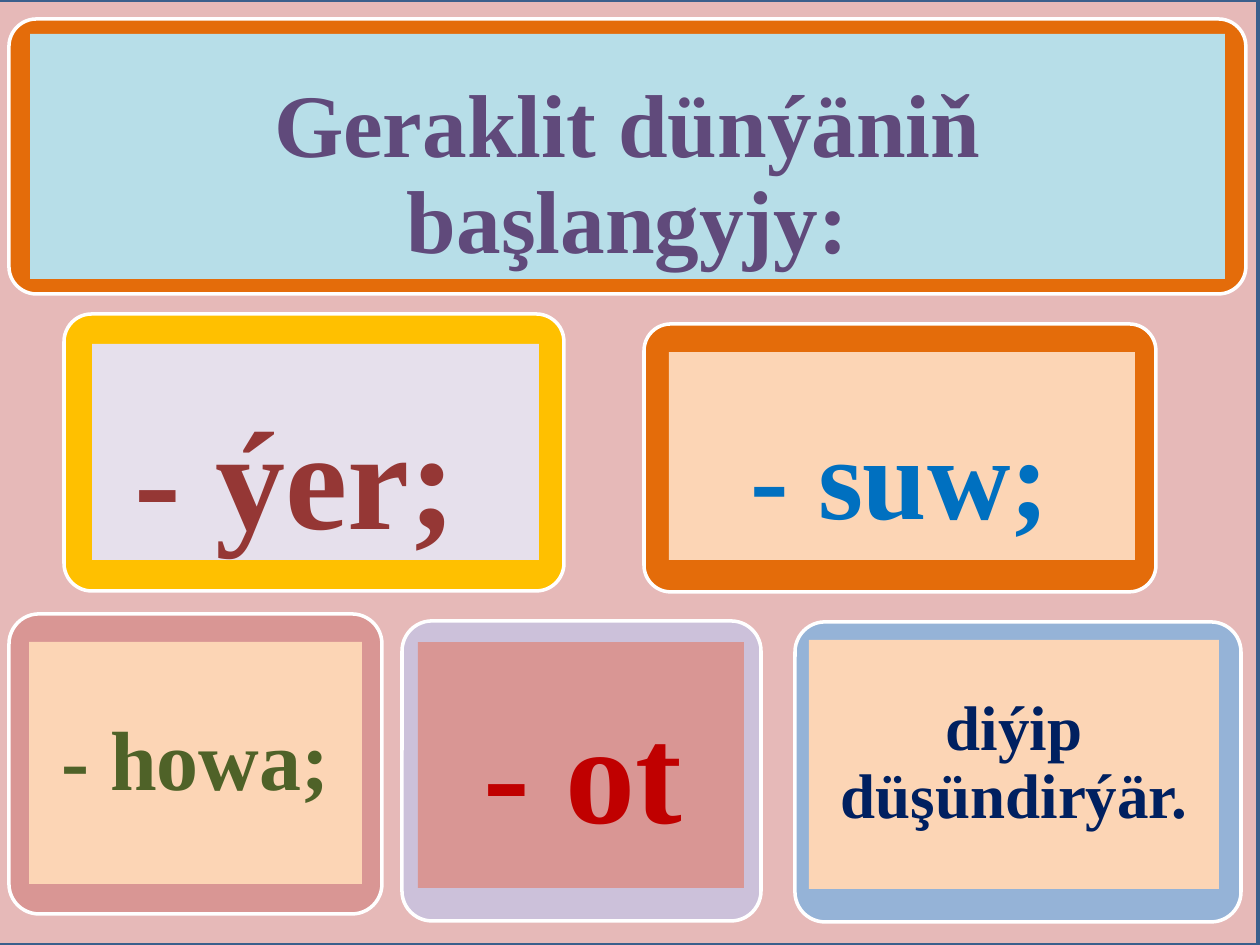
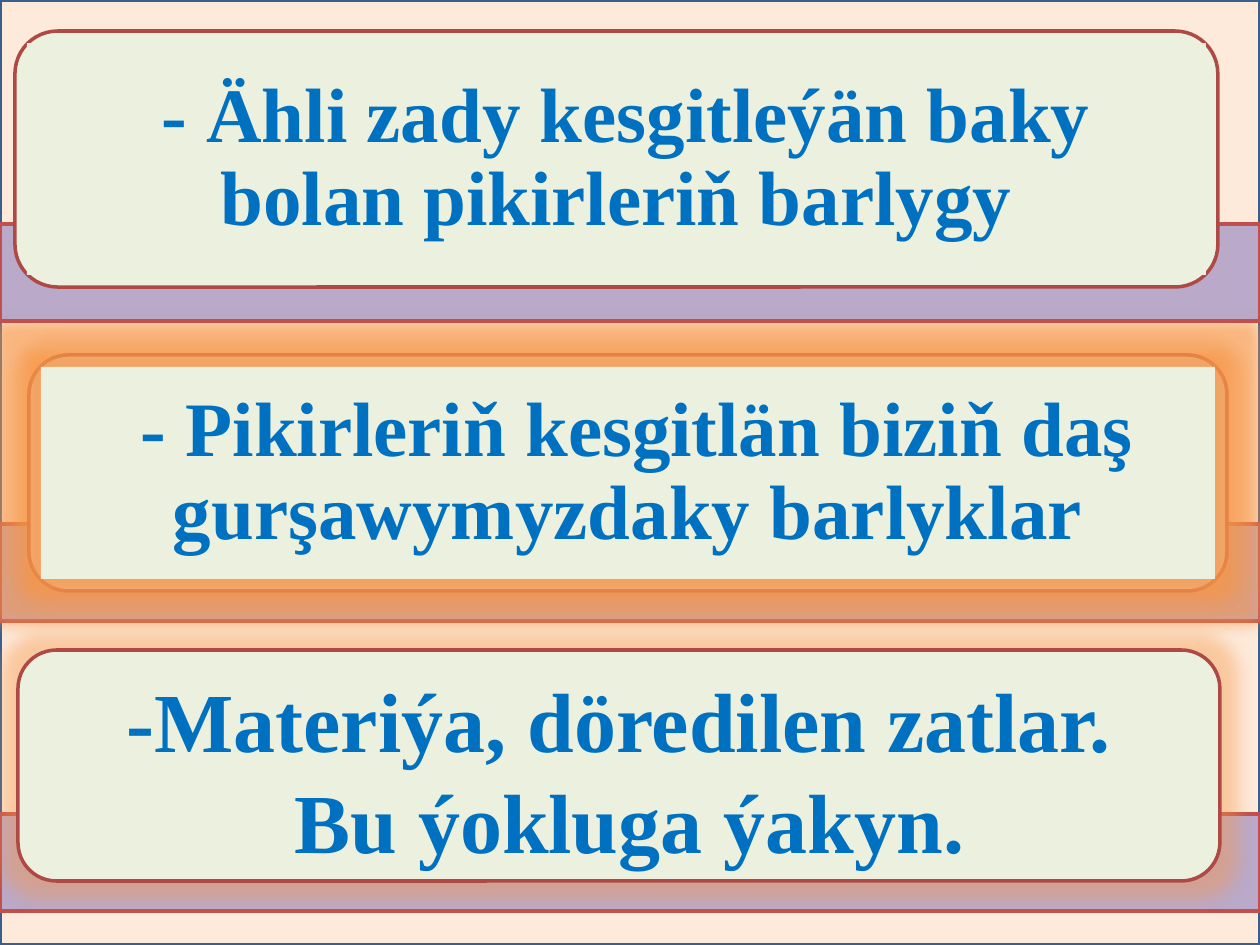
from lxml import etree
from pptx import Presentation
from pptx import util as u
from pptx.dml.color import RGBColor
from pptx.enum import shapes, text
from pptx.oxml import ns

PX = 914400 // 126
FONT = "Times New Roman"
COLOURS = {
    "white": "FFFFFF", "frame": "3A5F8C", "pink": "E6B9B8", "cream": "FDEADA",
    "orange": "E46C0A", "gold": "FFC000", "rose": "D99694", "lilac": "CCC1DA",
    "steel": "95B3D7", "aqua": "B7DEE8", "mist": "E6E0EC", "peach": "FCD5B5",
    "pale green": "EBF1DE", "pale blue": "DCE6F2", "violet": "B3A2C7",
    "red line": "C0504D", "dark red line": "AE4946", "glow": "F79646",
    "purple": "604A7B", "brick": "953735", "blue": "0070C0",
    "olive": "4F6228", "red": "C00000", "navy": "002060",
}
RECT = shapes.MSO_SHAPE.RECTANGLE
ROUND = shapes.MSO_SHAPE.ROUNDED_RECTANGLE


def rgb(name):
    return RGBColor.from_string(COLOURS[name])


def px(*lengths):
    return [length * PX for length in lengths]


def inner(box, left, top, right, bottom):
    """Box left after taking a margin from each side."""
    x, y, width, height = box
    return x + left, y + top, width - left - right, height - top - bottom


def add_box(page, kind, box, fill, line=None):
    shape = page.shapes.add_shape(kind, *px(*box))
    shape.shadow.inherit = False
    shape.fill.solid()
    shape.fill.fore_color.rgb = rgb(fill)
    if line:
        shape.line.color.rgb = rgb(line)
        shape.line.width = u.Pt(2)
    else:
        shape.line.fill.background()
    return shape


def write(shape, wording, size, colour, spacing=0.9, insets=(32, 0, 32, 0)):
    """Bold centred text; insets are left, top, right, bottom."""
    frame = shape.text_frame
    frame.text = wording
    frame.word_wrap = True
    frame.auto_size = text.MSO_AUTO_SIZE.NONE
    frame.vertical_anchor = text.MSO_ANCHOR.MIDDLE
    (frame.margin_left, frame.margin_top,
     frame.margin_right, frame.margin_bottom) = px(*insets)
    for para in frame.paragraphs:
        para.alignment = text.PP_ALIGN.CENTER
        para.line_spacing = spacing
        para.space_before = u.Pt(0)
        for span in para.runs:
            span.font.name = FONT
            span.font.size = u.Pt(size)
            span.font.bold = True
            span.font.color.rgb = rgb(colour)


def add_alpha(colour_element, percent):
    alpha = etree.SubElement(colour_element, ns.qn("a:alpha"))
    alpha.set("val", str(percent * 1000))


def add_glow(shape, radius=31, percent=40):
    effects = shape.element.spPr.find(ns.qn("a:effectLst"))
    glow = etree.SubElement(effects, ns.qn("a:glow"), rad=str(radius * PX))
    colour = etree.SubElement(glow, ns.qn("a:srgbClr"), val=COLOURS["glow"])
    add_alpha(colour, percent)


def add_frame(page, fill):
    return add_box(page, RECT, (0, 0, 1260, 945), fill, "frame")


# Slide of framed cards
def add_card_border(page, box, fill):
    card = add_box(page, ROUND, box, fill, "white")
    card.adjustments[0] = 0.1
    return card


def add_heading(page, box, wording):
    border = add_card_border(page, box, "orange")
    title = page.shapes.title
    title.left, title.top, title.width, title.height = px(*inner(box, 21, 15, 21, 15))
    title.fill.solid()
    title.fill.fore_color.rgb = rgb("aqua")
    write(title, wording, 51, "purple", insets=(26, 40, 26, 0))
    border.element.addnext(title.element)


def add_card(page, box, margins, border, fill, wording, size, colour, **layout):
    add_card_border(page, box, border)
    panel = add_box(page, RECT, inner(box, *margins), fill)
    write(panel, wording, size, colour, **layout)


def build_origins(deck):
    page = deck.slides.add_slide(deck.slide_layouts[5])
    add_frame(page, "pink").left = -2 * PX
    add_heading(page, (9, 19, 1237, 275), "Geraklit dünýäniň başlangyjy:")
    # Middle row
    add_card(page, (64, 314, 500, 277), (28, 30, 25, 31), "gold", "mist",
             "- ýer;", 80, "brick", insets=(10, 64, 50, 0))
    add_card(page, (644, 324, 512, 268), (25, 28, 21, 32), "orange", "peach",
             "- suw;", 66, "blue", insets=(33, 52, 37, 0))
    # Bottom row
    add_card(page, (9, 614, 373, 300), (20, 28, 20, 30), "rose", "peach",
             "- howa;", 48, "olive", insets=(20, 0, 20, 0))
    add_card(page, (402, 621, 359, 300), (16, 21, 17, 33), "lilac", "rose",
             "- ot", 80, "red", spacing=1.0, insets=(42, 5, 38, 0))
    add_card(page, (795, 622, 446, 300), (14, 18, 22, 33), "steel", "peach",
             "diýip düşündirýär.", 36, "navy", insets=(19, 0, 19, 0))


# Slide of statements over bands
def add_band(page, top):
    band = add_box(page, RECT, (0, top, 1260, 97), "violet", "red line")
    colour = band.element.spPr.find(ns.qn("a:solidFill"))[0]
    add_alpha(colour, 90)


def add_statement(page, box, fill, wording, glowing=False):
    card = add_box(page, ROUND, box, fill, "dark red line")
    panel = add_box(page, RECT, inner(box, 12, 12, 12, 12), "pale green")
    write(panel, wording, 44, "blue")
    if glowing:
        add_glow(card)
        add_glow(panel, percent=60)


def add_conclusion(page, box, wording):
    card = add_box(page, ROUND, box, "pale green", "dark red line")
    add_glow(card)
    write(card, wording, 48, "blue", spacing=1.0, insets=(13, 14, 13, 6))


def build_statements(deck):
    page = deck.slides.add_slide(deck.slide_layouts[6])
    add_frame(page, "cream")
    add_band(page, 524)
    add_statement(page, (29, 355, 1198, 236), "pale blue",
                  " - Pikirleriň kesgitlän biziň daş gurşawymyzdaky barlyklar",
                  glowing=True)
    add_band(page, 224)
    add_statement(page, (15, 31, 1203, 256), "pale green",
                  " - Ähli zady kesgitleýän baky bolan pikirleriň barlygy")
    add_band(page, 814)
    add_conclusion(page, (18, 650, 1202, 231),
                   "-Materiýa, döredilen zatlar.\n Bu ýokluga ýakyn.")


def main():
    deck = Presentation()
    deck.slide_width, deck.slide_height = px(1260, 945)
    build_origins(deck)
    build_statements(deck)
    deck.save("out.pptx")


if __name__ == "__main__":
    main()
